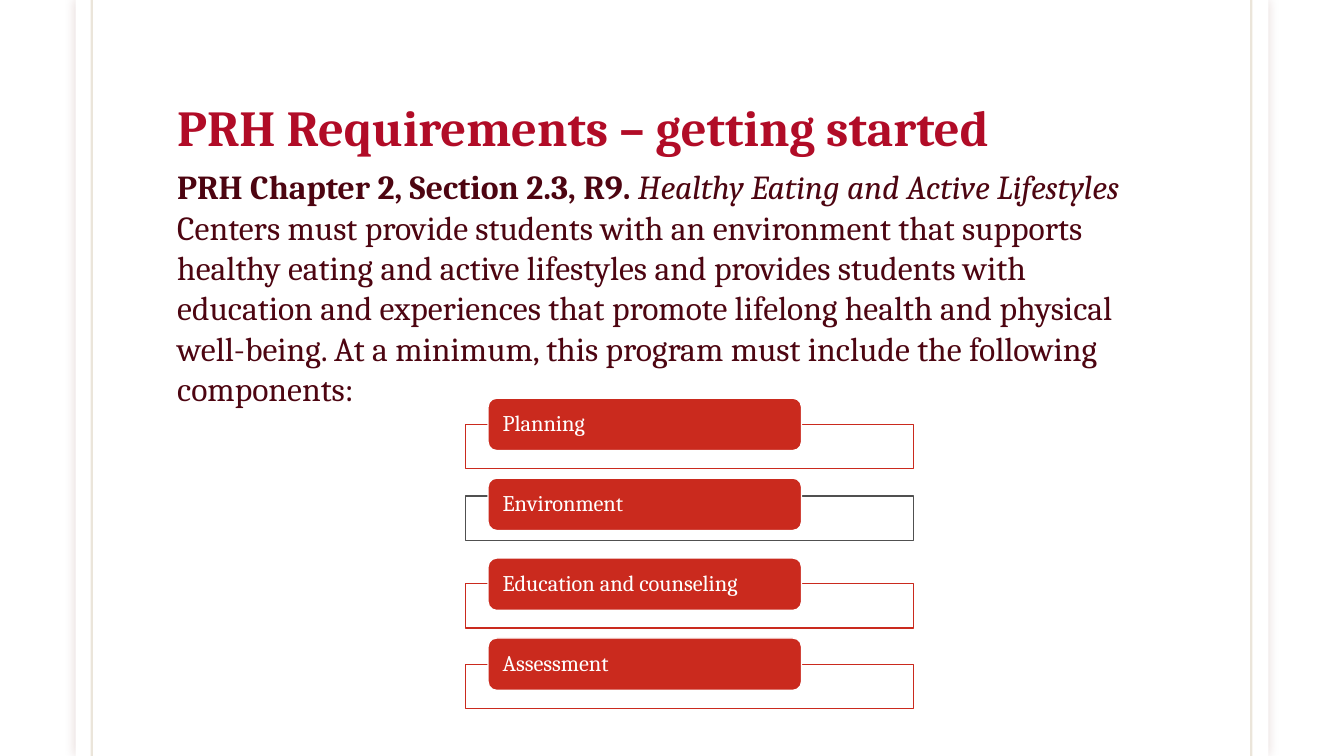
from lxml.etree import SubElement
from pptx import Presentation
from pptx.dml.color import RGBColor
from pptx.enum.shapes import MSO_CONNECTOR, MSO_SHAPE
from pptx.enum.text import MSO_ANCHOR, PP_ALIGN
from pptx.oxml.ns import qn
from pptx.util import Inches, Pt

WHITE = RGBColor(0xFF, 0xFF, 0xFF)
CRIMSON = RGBColor(0xB1, 0x0C, 0x27)
MAROON = RGBColor(0x4D, 0x05, 0x11)
RED = RGBColor(0xCA, 0x2A, 0x1E)
GREY = RGBColor(0x50, 0x50, 0x50)
GOLD = RGBColor(0x79, 0x54, 0x0B)
SHADOW = RGBColor(0x65, 0x15, 0x0F)

FONT = "Cambria"
INTRO = (
    "Centers must provide students with an environment that supports healthy eating "
    "and active lifestyles and provides students with education and experiences that "
    "promote lifelong health and physical well-being. At a minimum, this program must "
    "include the following components:"
)
COMPONENTS = [
    ("Planning", 4.21, RED),
    ("Environment", 4.92, GREY),
    ("Education and counseling", 5.79, RED),
    ("Assessment", 6.59, RED),
]


def set_alpha(properties, percent):
    for color in properties.iter(qn("a:srgbClr")):
        SubElement(color, qn("a:alpha"), val=str(percent * 1000))


def write_text(paragraph, text, size, color, bold=False, italic=False):
    run = paragraph.add_run()
    run.text = text
    run.font.name = FONT
    run.font.size = Pt(size)
    run.font.bold = bold
    run.font.italic = italic
    run.font.color.rgb = color


def add_text_area(slide, left, top, width, height, anchor=MSO_ANCHOR.TOP):
    area = slide.shapes.add_textbox(Inches(left), Inches(top), Inches(width), Inches(height))
    area.text_frame.word_wrap = True
    area.text_frame.vertical_anchor = anchor
    return area.text_frame


def add_panel(slide, kind, left, top, width, height, fill, outline=None):
    panel = slide.shapes.add_shape(
        kind, Inches(left), Inches(top), Inches(width), Inches(height)
    )
    panel.shadow.inherit = False
    panel.fill.solid()
    panel.fill.fore_color.rgb = fill
    if outline is None:
        panel.line.fill.background()
    else:
        panel.line.color.rgb = outline
        panel.line.width = Pt(1)
    return panel


def add_page(slide):
    page = add_panel(slide, MSO_SHAPE.RECTANGLE, 0.75, 0, 11.83, 7.5, WHITE)
    effects = page._element.spPr.find(qn("a:effectLst"))
    glow = SubElement(effects, qn("a:outerShdw"), blurRad=str(Pt(7)), dist="0", dir="0",
                      algn="ctr", rotWithShape="0")
    tint = SubElement(glow, qn("a:srgbClr"), val=str(SHADOW))
    SubElement(tint, qn("a:alpha"), val="15000")


def add_margin_rule(slide, x):
    rule = slide.shapes.add_connector(
        MSO_CONNECTOR.STRAIGHT, Inches(x), Inches(0), Inches(x), Inches(7.5)
    )
    rule.line.color.rgb = GOLD
    rule.line.width = Pt(1.5)
    set_alpha(rule._element.spPr, 15)
    SubElement(rule._element.spPr, qn("a:effectLst"))


def add_component(slide, label, frame_top, label_top, outline):
    frame = add_panel(
        slide, MSO_SHAPE.RECTANGLE, 4.62, frame_top, 4.44, 0.44, WHITE, outline
    )
    set_alpha(frame._element.spPr.find(qn("a:solidFill")), 90)
    tab = add_panel(
        slide, MSO_SHAPE.ROUNDED_RECTANGLE, 4.84, label_top, 3.11, 0.52, RED, WHITE
    )
    text = tab.text_frame
    text.word_wrap = True
    text.vertical_anchor = MSO_ANCHOR.MIDDLE
    text.margin_left = text.margin_right = Inches(0.12)
    text.margin_top = text.margin_bottom = 0
    paragraph = text.paragraphs[0]
    paragraph.alignment = PP_ALIGN.LEFT
    paragraph.line_spacing = 0.9
    write_text(paragraph, label, size=16, color=WHITE)


def main():
    presentation = Presentation()
    presentation.slide_width = Inches(13.33)
    presentation.slide_height = Inches(7.5)
    slide = presentation.slides.add_slide(presentation.slide_layouts[6])

    add_page(slide)
    for x in (0.91, 12.41):
        add_margin_rule(slide, x)

    title = add_text_area(slide, 1.66, 0.35, 10, 1.25, MSO_ANCHOR.BOTTOM).paragraphs[0]
    title.line_spacing = 0.85
    write_text(title, "PRH Requirements – getting started", size=36, color=CRIMSON, bold=True)

    requirement = add_text_area(slide, 1.66, 1.6, 10, 3.23)
    citation = requirement.paragraphs[0]
    write_text(citation, "PRH Chapter 2, Section 2.3, R9. ", size=24, color=MAROON, bold=True)
    write_text(citation, "Healthy Eating and Active Lifestyles", size=24, color=MAROON,
               italic=True)
    write_text(requirement.add_paragraph(), INTRO, size=24, color=MAROON)

    for row, (label, frame_top, outline) in enumerate(COMPONENTS):
        add_component(slide, label, frame_top, 3.95 + row * 0.793, outline)

    presentation.save("out.pptx")


if __name__ == "__main__":
    main()
